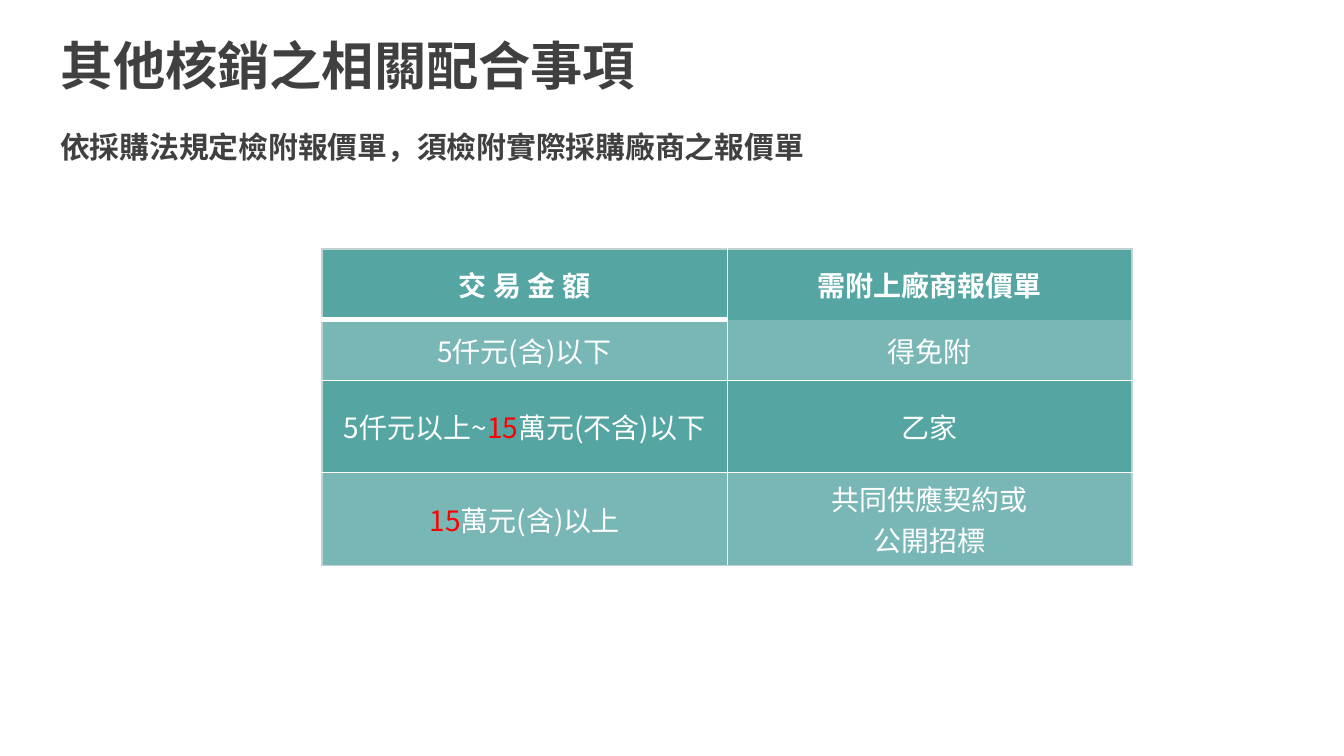
from lxml.etree import SubElement
from pptx import Presentation
from pptx.dml.color import RGBColor
from pptx.enum.text import MSO_ANCHOR, PP_ALIGN
from pptx.oxml.ns import qn
from pptx.util import Pt

EMU_PER_PX = 914400 / 134.4
WHITE = RGBColor(0xFF, 0xFF, 0xFF)
CHARCOAL = RGBColor(0x40, 0x40, 0x40)
RED = RGBColor(0xFF, 0x00, 0x00)
TEAL = RGBColor(0x55, 0xA5, 0xA2)
LIGHT_TEAL = RGBColor(0x78, 0xB7, 0xB5)
PALE_TEAL = RGBColor(0xC0, 0xD3, 0xD2)

OUTER = (PALE_TEAL, 0.75)
INNER = (WHITE, 0.25)
HEADER_RULE = (WHITE, 3)
NO_RULE = None

HEADING_FONT = "Noto Sans CJK SC"
TABLE_FONT = "Noto Sans CJK KR"

QUOTE_RULES = [
    [[["交 易 金 額"]], [["需附上廠商報價單"]]],
    [[["5仟元(含)以下"]], [["得免附"]]],
    [[["5仟元以上~", "15", "萬元(不含)以下"]], [["乙家"]]],
    [[["15", "萬元(含)以上"]], [["共同供應契約或"], ["公開招標"]]],
]
ROW_HEIGHTS = [71, 60, 92, 94]
COLUMN_WIDTH = 405


def px(length):
    return round(length * EMU_PER_PX)


class Deck:
    def __init__(self, width, height):
        self.presentation = Presentation()
        self.presentation.slide_width = px(width)
        self.presentation.slide_height = px(height)
        self.slide = self.presentation.slides.add_slide(self.presentation.slide_layouts[6])

    def style(self, run, font, size, color, bold):
        run.font.name = font
        run.font.size = Pt(size)
        run.font.bold = bold
        run.font.color.rgb = color
        SubElement(run.font._element, qn("a:ea"), typeface=font)

    def heading(self, text, left, top, width, height, size, inset):
        frame = self.slide.shapes.add_textbox(px(left), px(top), px(width), px(height)).text_frame
        frame.word_wrap = True
        frame.vertical_anchor = MSO_ANCHOR.MIDDLE
        frame.margin_left = px(inset)
        frame.text = text
        self.style(frame.paragraphs[0].runs[0], HEADING_FONT, size, CHARCOAL, True)

    def border(self, cell, side, rule):
        properties = cell._tc.get_or_add_tcPr()
        line = SubElement(properties, qn(f"a:ln{side}"))
        if rule is NO_RULE:
            SubElement(line, qn("a:noFill"))
            return
        color, width = rule
        line.set("w", str(Pt(width)))
        fill = SubElement(line, qn("a:solidFill"))
        SubElement(fill, qn("a:srgbClr"), val=str(color))

    def cell(self, cell, paragraphs, fill, bold, borders):
        cell.vertical_anchor = MSO_ANCHOR.MIDDLE
        cell.margin_left = cell.margin_right = px(9)
        cell.margin_top = cell.margin_bottom = px(5)
        for side, rule in borders.items():
            self.border(cell, side, rule)
        cell.fill.solid()
        cell.fill.fore_color.rgb = fill
        frame = cell.text_frame
        for index, pieces in enumerate(paragraphs):
            paragraph = frame.add_paragraph() if index else frame.paragraphs[0]
            paragraph.alignment = PP_ALIGN.CENTER
            for piece in pieces:
                run = paragraph.add_run()
                run.text = piece
                self.style(run, TABLE_FONT, 15, RED if piece == "15" else WHITE, bold)

    def table(self, rows, left, top, column_width, row_heights):
        columns = len(rows[0])
        table = self.slide.shapes.add_table(
            len(rows), columns, px(left), px(top),
            px(column_width * columns), px(sum(row_heights))).table
        table.first_row = False
        table.horz_banding = False
        for column in table.columns:
            column.width = px(column_width)
        for r, (contents, height) in enumerate(zip(rows, row_heights)):
            table.rows[r].height = px(height)
            for c, paragraphs in enumerate(contents):
                below_header = NO_RULE if c else HEADER_RULE
                levels = [OUTER, below_header] + [INNER] * (len(rows) - 2) + [OUTER]
                sides = [OUTER] + [INNER] * (columns - 1) + [OUTER]
                borders = {"L": sides[c], "R": sides[c + 1], "T": levels[r], "B": levels[r + 1]}
                fill = LIGHT_TEAL if r % 2 else TEAL
                self.cell(table.cell(r, c), paragraphs, fill, r == 0, borders)


def main():
    deck = Deck(1344, 756)
    deck.heading("其他核銷之相關配合事項", 0, 0, 1344, 130, 28, 61)
    deck.heading("依採購法規定檢附報價單，須檢附實際採購廠商之報價單", 47, 113, 1249, 67, 16, 13)
    deck.table(QUOTE_RULES, 322, 249, COLUMN_WIDTH, ROW_HEIGHTS)
    deck.presentation.save("out.pptx")


if __name__ == "__main__":
    main()
